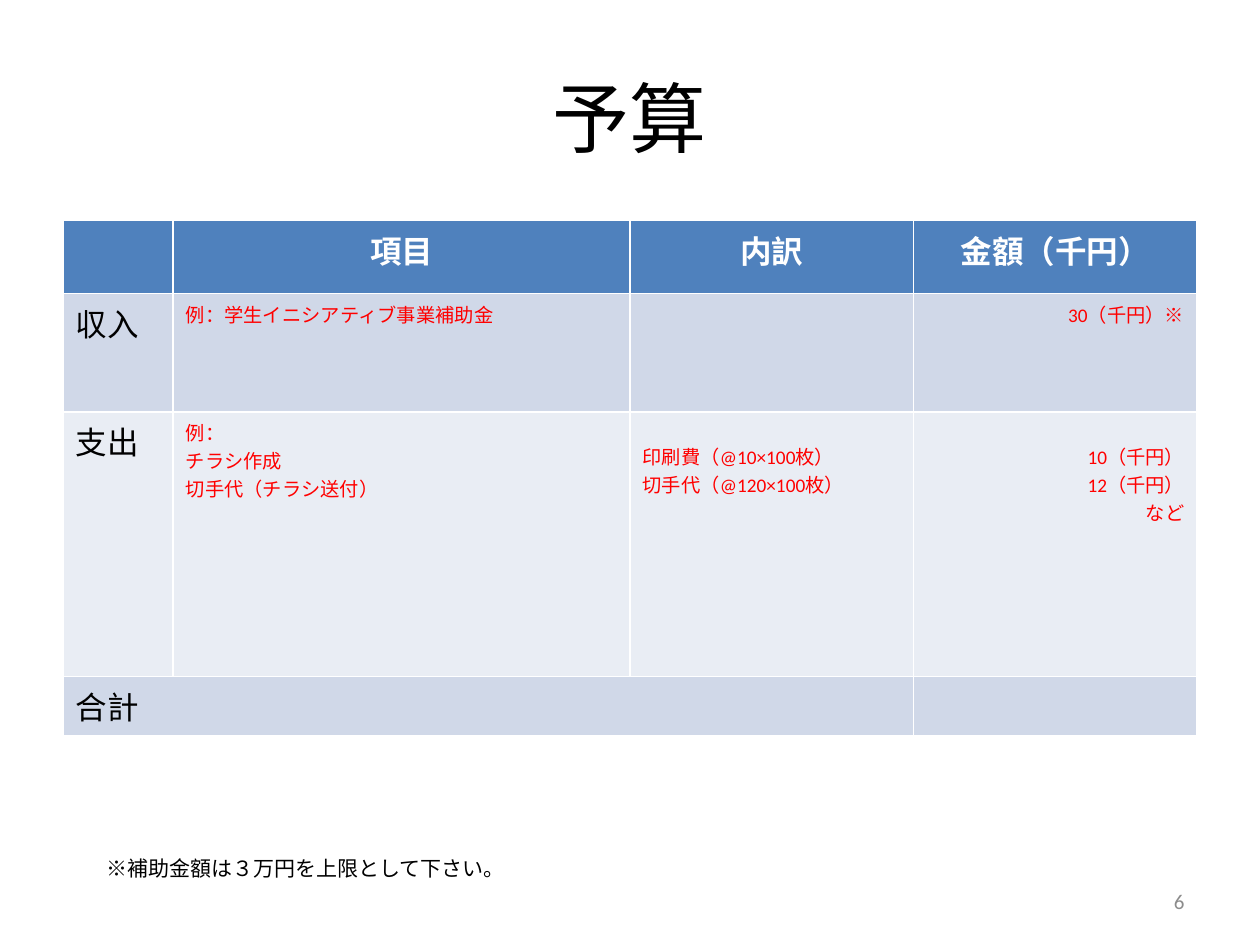
from dataclasses import dataclass

from pptx import Presentation
from pptx.dml.color import RGBColor
from pptx.enum.text import MSO_ANCHOR, PP_ALIGN
from pptx.util import Inches, Pt

UNIT = 0.125  # one grid step in inches: 80 columns by 60 rows
LEFT, CENTER, RIGHT = PP_ALIGN.LEFT, PP_ALIGN.CENTER, PP_ALIGN.RIGHT


@dataclass(frozen=True)
class Theme:
    font: str = "Calibri"
    ink: str = "000000"
    white: str = "FFFFFF"
    example: str = "FF0000"
    muted: str = "8C8C8C"
    header: str = "4F81BD"
    bands: tuple = ("D0D8E8", "E9EDF4")
    title_size: int = 44
    label_size: int = 18
    note_size: int = 12
    example_size: int = 11


def grid(steps):
    return Inches(steps * UNIT)


class BudgetSlide:
    def __init__(self, prs, theme):
        self.theme = theme
        self.s = prs.slides.add_slide(prs.slide_layouts[5])

    def add_lines(self, tf, lines, size, color, align=LEFT, bold=False):
        for i, line in enumerate(lines):
            p = tf.paragraphs[0] if i == 0 else tf.add_paragraph()
            p.alignment = align
            r = p.add_run()
            r.text = line
            r.font.name = self.theme.font
            r.font.size = Pt(size)
            r.font.bold = bold
            r.font.color.rgb = RGBColor.from_string(color)

    def title(self, text, box):
        sp = self.s.shapes.title
        sp.left, sp.top, sp.width, sp.height = map(grid, box)
        sp.text_frame.vertical_anchor = MSO_ANCHOR.MIDDLE
        self.add_lines(sp.text_frame, [text], self.theme.title_size, self.theme.ink, CENTER)

    def text(self, text, box, color, align=LEFT, anchor=MSO_ANCHOR.TOP):
        tf = self.s.shapes.add_textbox(*map(grid, box)).text_frame
        tf.word_wrap = True
        tf.vertical_anchor = anchor
        self.add_lines(tf, [text], self.theme.note_size, color, align)

    def table(self, rows, left, top, col_steps, row_steps):
        frame = self.s.shapes.add_table(
            len(row_steps), len(col_steps), grid(left), grid(top),
            grid(sum(col_steps)), grid(sum(row_steps)))
        table = frame.table
        for column, steps in zip(table.columns, col_steps):
            column.width = grid(steps)
        for row, steps in zip(table.rows, row_steps):
            row.height = grid(steps)
        for i, row in enumerate(rows):
            for j, lines in enumerate(row):
                self.cell(table.cell(i, j), i, j, lines)
        return table

    def cell(self, cell, i, j, lines):
        """Style by role: header row, label column, or red example entry."""
        t = self.theme
        fill = t.header if i == 0 else t.bands[(i - 1) % 2]
        cell.fill.solid()
        cell.fill.fore_color.rgb = RGBColor.from_string(fill)
        if i == 0:
            style = (t.label_size, t.white, CENTER, True)
        elif j == 0:
            style = (t.label_size, t.ink)
        else:
            style = (t.example_size, t.example, RIGHT if j == 3 else LEFT)
        self.add_lines(cell.text_frame, lines, *style)


def main():
    prs = Presentation()
    prs.slide_width, prs.slide_height = grid(80), grid(60)
    theme = Theme()
    slide = BudgetSlide(prs, theme)

    slide.title("予算", (4, 2.4, 72, 10))
    rows = [
        [[], ["項目"], ["内訳"], ["金額（千円）"]],
        [["収入"], ["例：学生イニシアティブ事業補助金"], [], ["30（千円）※"]],
        [["支出"],
         ["例：", "チラシ作成", "切手代（チラシ送付）"],
         ["印刷費（@10×100枚）", "切手代（@120×100枚）"],
         ["10（千円）", "12（千円）", "など"]],
        [["合計"], [], [], []],
    ]
    table = slide.table(rows, 4, 14, (7, 29, 18, 18), (4.64, 7.52, 16.8, 3.76))
    for j in (2, 3):  # expense details start one line below the example heading
        table.cell(2, j).margin_top = Inches(0.24)
    table.cell(3, 0).merge(table.cell(3, 2))

    slide.text("6", (57.33, 55.6, 18.67, 3.2), theme.muted, RIGHT, MSO_ANCHOR.MIDDLE)
    slide.text("※補助金額は３万円を上限として下さい。", (6, 53.9, 28.3, 2.4), theme.ink)
    prs.save("out.pptx")


if __name__ == "__main__":
    main()
